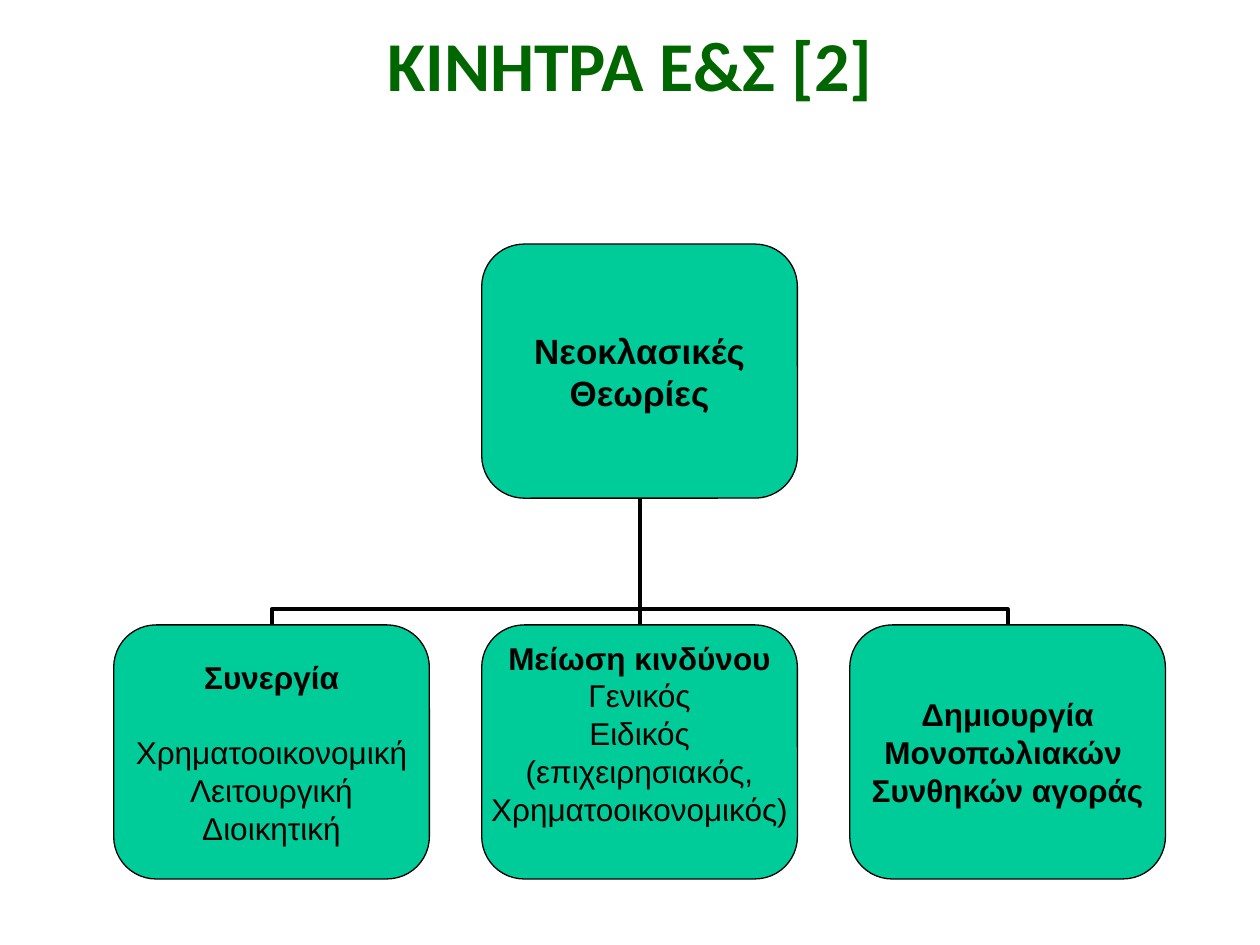
from lxml import etree
from pptx import Presentation
from pptx.dml.color import RGBColor
from pptx.enum.shapes import MSO_CONNECTOR, MSO_SHAPE
from pptx.enum.text import MSO_ANCHOR, PP_ALIGN
from pptx.oxml.ns import qn
from pptx.util import Pt

ROUNDED = MSO_SHAPE.ROUNDED_RECTANGLE
STRAIGHT, ELBOW = MSO_CONNECTOR.STRAIGHT, MSO_CONNECTOR.ELBOW
CENTER = PP_ALIGN.CENTER
TOP, MIDDLE = MSO_ANCHOR.TOP, MSO_ANCHOR.MIDDLE

# Content: bold lines first, then regular ones; gap is space between the
# two groups, foot is room kept free below the text
TITLE = "ΚΙΝΗΤΡΑ Ε&Σ [2]"
ROOT = {"bold": ["Νεοκλασικές", "Θεωρίες"]}
CHILDREN = [
    {"bold": ["Συνεργία"],
     "plain": ["Χρηματοοικονομική", "Λειτουργική", "Διοικητική"], "gap": 21.5},
    {"bold": ["Μείωση κινδύνου"],
     "plain": ["Γενικός", "Ειδικός", "(επιχειρησιακός,", "Χρηματοοικονομικός)"],
     "foot": 21.5},
    {"bold": ["Δημιουργία", "Μονοπωλιακών ", "Συνθηκών αγοράς"]},
]

THEME = {
    "title": RGBColor(0x00, 0x66, 0x00), "fill": RGBColor(0x00, 0xCC, 0x99),
    "ink": RGBColor(0, 0, 0),
    "title_font": "Calibri", "body_font": "Arial",
    "title_size": 40, "root_size": 20, "child_size": 18,
    "outline": 0.75, "link": 2.25,
}

# Layout, in points
PAGE_W, PAGE_H = 720, 540
BOX_W, BOX_H = 180.4, 145.2
LEFT, PITCH = 65, 210.3
ROOT_TOP, CHILD_TOP = 139.5, 357.1
ROOT_BOTTOM = ROOT_TOP + BOX_H
DROP = CHILD_TOP - ROOT_BOTTOM
BEND = 0.124  # share of the drop between a child and the crossbar


def style(para, font, size, color, bold):
    para.alignment = CENTER
    for span in para.runs:
        span.font.name = font
        span.font.size = Pt(size)
        span.font.color.rgb = color
        span.font.bold = bold


def add_box(page, left, top, content, size):
    box = page.shapes.add_shape(ROUNDED, Pt(left), Pt(top), Pt(BOX_W), Pt(BOX_H))
    box.shadow.inherit = False
    box.adjustments[0] = 0.167
    box.fill.solid()
    box.fill.fore_color.rgb = THEME["fill"]
    box.line.color.rgb = THEME["ink"]
    box.line.width = Pt(THEME["outline"])
    frame = box.text_frame
    frame.word_wrap = False
    frame.vertical_anchor = MIDDLE
    frame.margin_left = frame.margin_right = frame.margin_top = 0
    frame.margin_bottom = Pt(content.get("foot", 0))
    bold_count = len(content["bold"])
    frame.text = "\n".join(content["bold"] + content.get("plain", []))
    for index, para in enumerate(frame.paragraphs):
        style(para, THEME["body_font"], size, THEME["ink"], index < bold_count)
        if index == bold_count and "gap" in content:
            para.space_before = Pt(content["gap"])


def add_link(page, child_x, root_x):
    span = abs(child_x - root_x)
    if span < 1:
        link = page.shapes.add_connector(
            STRAIGHT, Pt(root_x), Pt(CHILD_TOP), Pt(root_x), Pt(ROOT_BOTTOM))
    else:
        # An elbow is drawn lying down, then turned upright about its centre
        mid_x, mid_y = (child_x + root_x) / 2, (CHILD_TOP + ROOT_BOTTOM) / 2
        side = 1 if child_x > root_x else -1
        link = page.shapes.add_connector(
            ELBOW, Pt(mid_x + side * DROP / 2), Pt(mid_y - span / 2),
            Pt(mid_x - side * DROP / 2), Pt(mid_y + span / 2))
        properties = link._element.spPr
        turn = 90 if side > 0 else 270
        properties.find(qn("a:xfrm")).set("rot", str(turn * 60000))
        geometry = properties.find(qn("a:prstGeom"))
        guides = geometry.find(qn("a:avLst"))
        if guides is None:
            guides = etree.SubElement(geometry, qn("a:avLst"))
        etree.SubElement(guides, qn("a:gd"), name="adj1",
                         fmla=f"val {round(BEND * 100000)}")
    link.line.color.rgb = THEME["ink"]
    link.line.width = Pt(THEME["link"])
    etree.SubElement(link._element.spPr, qn("a:effectLst"))


def main():
    deck = Presentation()
    deck.slide_width, deck.slide_height = Pt(PAGE_W), Pt(PAGE_H)
    page = deck.slides.add_slide(deck.slide_layouts[6])

    # Title
    title = page.shapes.add_textbox(0, Pt(8), Pt(PAGE_W), Pt(104))
    frame = title.text_frame
    frame.word_wrap = True
    frame.vertical_anchor = TOP
    frame.text = TITLE
    para = frame.paragraphs[0]
    para.line_spacing = 1.02
    style(para, THEME["title_font"], THEME["title_size"], THEME["title"], True)

    # Links first, so the boxes cover their ends
    lefts = [LEFT + PITCH * column for column in range(len(CHILDREN))]
    root_left = (lefts[0] + lefts[-1]) / 2
    for left in lefts:
        add_link(page, left + BOX_W / 2, root_left + BOX_W / 2)

    # Boxes
    add_box(page, root_left, ROOT_TOP, ROOT, THEME["root_size"])
    for left, child in zip(lefts, CHILDREN):
        add_box(page, left, CHILD_TOP, child, THEME["child_size"])

    deck.save("out.pptx")


if __name__ == "__main__":
    main()
